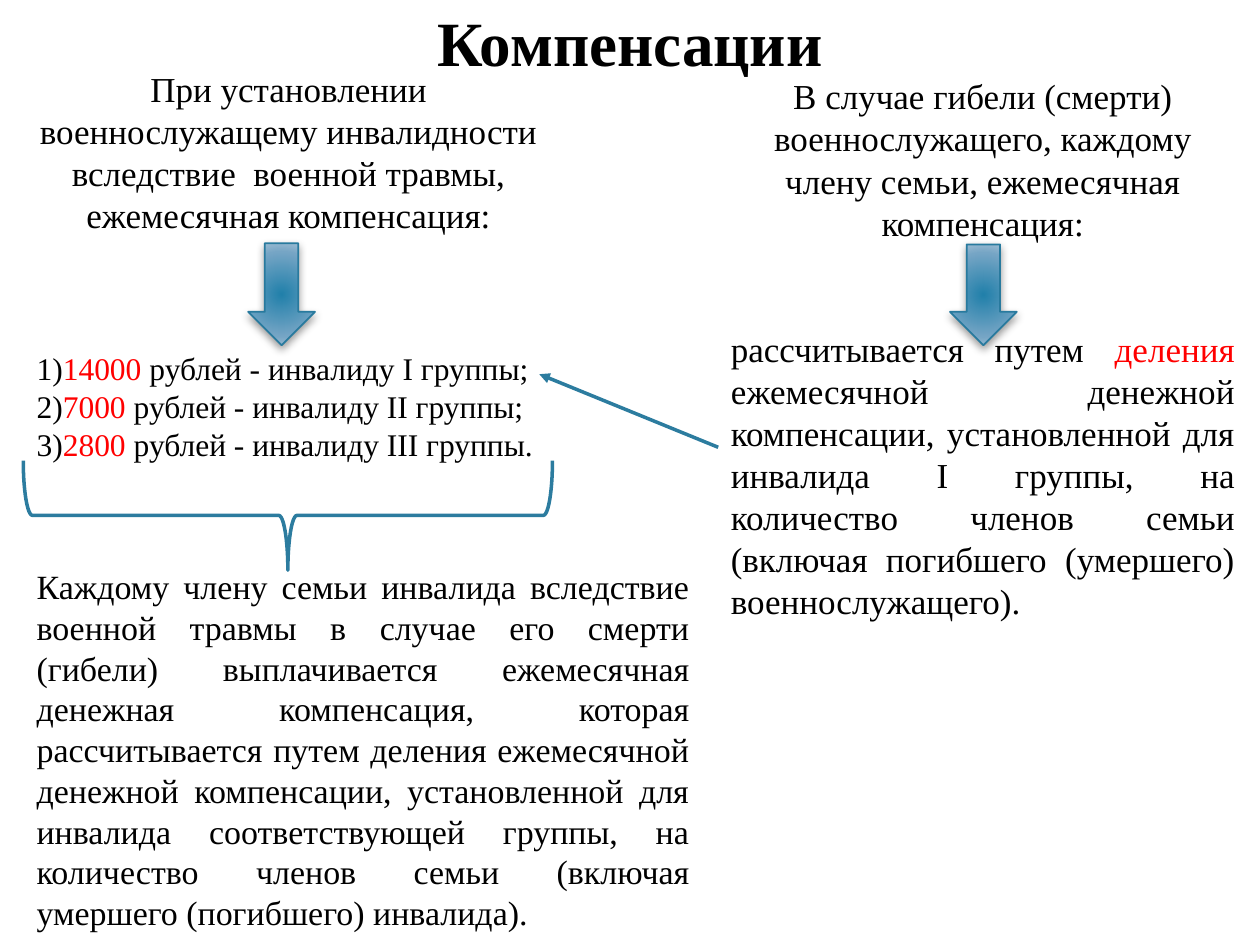
from lxml.etree import SubElement
from pptx import Presentation
from pptx.dml.color import RGBColor
from pptx.enum.shapes import MSO_CONNECTOR, MSO_SHAPE
from pptx.enum.text import MSO_ANCHOR, MSO_AUTO_SIZE, PP_ALIGN
from pptx.oxml import parse_xml
from pptx.oxml.ns import nsdecls, qn
from pptx.util import Inches, Pt

BLACK = RGBColor(0x00, 0x00, 0x00)
RED = RGBColor(0xFF, 0x00, 0x00)
ARROW_EDGE = RGBColor(0x28, 0x7A, 0x9E)
LINE_BLUE = RGBColor(0x2C, 0x7C, 0x9F)
GRADIENT = ((0, RGBColor(0x21, 0x80, 0xAA)),
            (69, RGBColor(0x75, 0xA5, 0xC5)),
            (100, RGBColor(0xB8, 0xCC, 0xDC)))
FONT = "Times New Roman"

# Grid of 100 columns by 75 rows
COLUMNS, ROWS = 100, 75
WIDTH, HEIGHT = Inches(10), Inches(7.5)
LEFT, RIGHT, COLUMN_WIDTH = 1.9, 57, 42

CENTER = {"alignment": PP_ALIGN.CENTER}
JUSTIFY = {"alignment": PP_ALIGN.JUSTIFY}


def across(columns):
    return round(WIDTH * columns / COLUMNS)


def down(rows):
    return round(HEIGHT * rows / ROWS)


def cell(left, top, width, height):
    return across(left), down(top), across(width), down(height)


def apply(target, values):
    for name, value in values.items():
        setattr(target, name, value)


def write(placeholder, box, paragraphs, size, bold=False, **frame_format):
    """Place a placeholder; each paragraph is (format, runs), a run (text, colour)."""
    apply(placeholder, dict(zip(("left", "top", "width", "height"), cell(*box))))
    frame = placeholder.text_frame
    apply(frame, {"word_wrap": True, "auto_size": MSO_AUTO_SIZE.NONE, **frame_format})
    for index, (paragraph_format, runs) in enumerate(paragraphs):
        paragraph = frame.add_paragraph() if index else frame.paragraphs[0]
        properties = paragraph._p.get_or_add_pPr()
        properties.set("marL", "0")
        properties.set("indent", "0")
        SubElement(properties, qn("a:buNone"))
        values = {"space_before": Pt(0), "line_spacing": 1.0, **paragraph_format}
        run_size = values.pop("size", size)
        apply(paragraph, values)
        for text, color in runs:
            run = paragraph.add_run()
            run.text = text
            apply(run.font, {"name": FONT, "size": Pt(run_size), "bold": bold})
            run.font.color.rgb = color


def outline(shape, color, width):
    shape.line.color.rgb = color
    shape.line.width = Pt(width)


def add_down_arrow(slide, left, top, height):
    arrow = slide.shapes.add_shape(MSO_SHAPE.DOWN_ARROW, *cell(left, top, 5.3, height))
    outline(arrow, ARROW_EDGE, 1)
    arrow.fill.background()
    arrow.shadow.inherit = False
    properties = arrow._element.spPr
    # Radial gradient
    stops = "".join(f'<a:gs pos="{share * 1000}"><a:srgbClr val="{color}"/></a:gs>'
                    for share, color in GRADIENT)
    properties.replace(properties.find(qn("a:noFill")), parse_xml(
        f'<a:gradFill {nsdecls("a")}><a:gsLst>{stops}</a:gsLst><a:path path="circle">'
        '<a:fillToRect l="100000" t="100000" r="100000" b="100000"/></a:path></a:gradFill>'))
    # Soft shadow below
    properties.find(qn("a:effectLst")).append(parse_xml(
        f'<a:outerShdw {nsdecls("a")} blurRad="{Pt(5)}" dist="{Pt(2)}" dir="5400000" '
        'rotWithShape="0"><a:srgbClr val="000000"><a:alpha val="40000"/></a:srgbClr>'
        '</a:outerShdw>'))


def add_pointer(slide, start, end):
    pointer = slide.shapes.add_connector(
        MSO_CONNECTOR.STRAIGHT, across(start[0]), down(start[1]), across(end[0]), down(end[1]))
    outline(pointer, LINE_BLUE, 2)
    SubElement(pointer.line._get_or_add_ln(), qn("a:tailEnd"), type="triangle")
    SubElement(pointer._element.spPr, qn("a:effectLst"))


def add_brace(slide, box):
    brace = slide.shapes.add_shape(MSO_SHAPE.LEFT_BRACE, *cell(*box))
    brace.rotation = 270
    brace.shadow.inherit = False
    brace.fill.background()
    outline(brace, LINE_BLUE, 2)


def main():
    presentation = Presentation()
    apply(presentation, {"slide_width": WIDTH, "slide_height": HEIGHT})
    slide = presentation.slides.add_slide(presentation.slide_layouts[4])
    title, disability, family, death, spare = slide.placeholders
    spare._element.getparent().remove(spare._element)

    write(title, (6, 1.2, 88, 5.6), [(CENTER, [("Компенсации", BLACK)])], 36, bold=True,
          vertical_anchor=MSO_ANCHOR.BOTTOM, margin_bottom=Inches(0.05))

    # Disability: heading and amounts by group
    amounts = (("14000", "I группы;"), ("7000", "II группы;"), ("2800", "III группы."))
    amount_lines = [
        ({**JUSTIFY, "size": 18, "space_before": Pt(65 if number == 1 else 0)},
         [(f"{number})", BLACK), (f"{amount} ", RED), (f"рублей - инвалиду {group}", BLACK)])
        for number, (amount, group) in enumerate(amounts, 1)]
    write(disability, (LEFT, 14.9, COLUMN_WIDTH, 22.2), [
        (CENTER, [("При установлении военнослужащему инвалидности вследствие  военной "
                   "травмы, ежемесячная компенсация:", BLACK)]),
        *amount_lines], 20, vertical_anchor=MSO_ANCHOR.BOTTOM, margin_bottom=Inches(0.04))

    # Family of a disabled serviceman
    write(family, (LEFT, 44.4, 53.9, 30.6), [
        (JUSTIFY, [("Каждому члену семьи инвалида вследствие военной травмы в случае его "
                    "смерти (гибели) выплачивается ежемесячная денежная компенсация, которая "
                    "рассчитывается путем деления ежемесячной денежной компенсации, "
                    "установленной для инвалида соответствующей группы, на количество членов "
                    "семьи (включая умершего (погибшего) инвалида).", BLACK)])],
          19.4, vertical_anchor=MSO_ANCHOR.TOP)

    # Death: heading and rule of calculation
    write(death, (RIGHT, 48.3, COLUMN_WIDTH, 8.2), [
        (CENTER, [("В случае гибели (смерти) военнослужащего, каждому члену семьи, "
                   "ежемесячная компенсация:", BLACK)]),
        ({**JUSTIFY, "space_before": Pt(48)}, [
            ("рассчитывается путем ", BLACK), ("деления ", RED),
            ("ежемесячной денежной компенсации, установленной для инвалида I группы, на "
             "количество членов семьи (включая погибшего (умершего) военнослужащего).", BLACK)])],
          20, vertical_anchor=MSO_ANCHOR.BOTTOM, margin_bottom=Inches(0.72))

    # Arrows and brace
    for left, top, height in ((19.7, 19.3, 8.1), (75.4, 19.4, 8)):
        add_down_arrow(slide, left, top, height)
    add_pointer(slide, (RIGHT, 35.5), (42.8, 29.7))
    add_brace(slide, (18.5, 19.9, 8.7, COLUMN_WIDTH))

    presentation.save("out.pptx")


if __name__ == "__main__":
    main()
